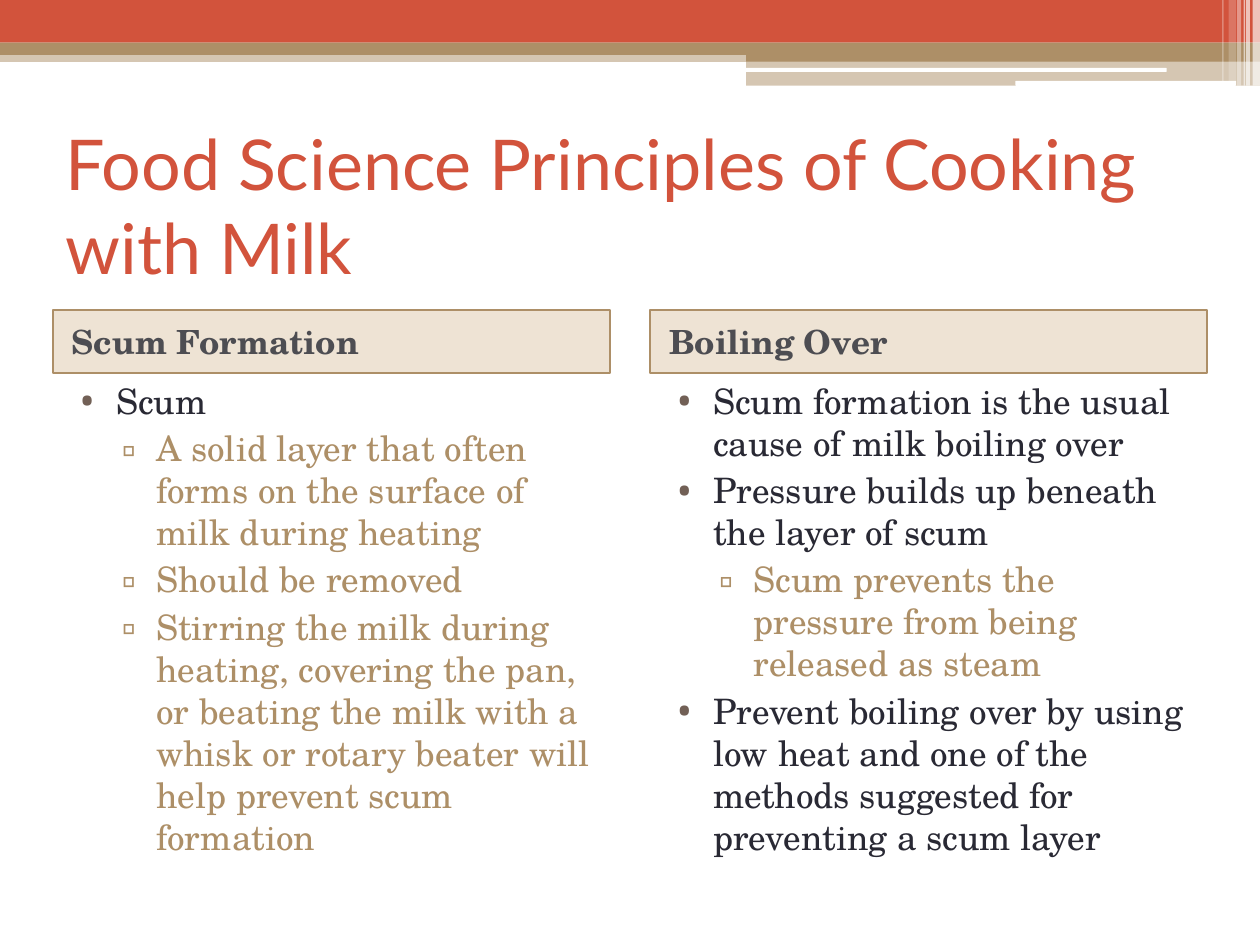
"""Build a slide on the food science principles of cooking with milk."""
from dataclasses import dataclass

from lxml.etree import SubElement
from pptx import Presentation
from pptx.dml.color import RGBColor
from pptx.enum.shapes import MSO_SHAPE
from pptx.enum.text import MSO_ANCHOR, PP_ALIGN
from pptx.oxml.ns import qn
from pptx.slide import Slide
from pptx.util import Cm, Pt


def colour(hex_code):
    return RGBColor.from_string(hex_code)


@dataclass
class MilkSlide:
    slide: Slide
    red: str = "D2533C"
    tan: str = "AD8F67"
    white: str = "FFFFFF"
    ink: str = "292934"
    title_font: str = "Lato"
    body_font: str = "TeX Gyre Schola"

    def block(self, left, top, width, height, fill, opacity=100, preset=MSO_SHAPE.RECTANGLE):
        shape = self.slide.shapes.add_shape(preset, Cm(left), Cm(top), Cm(width), Cm(height))
        shape.shadow.inherit = False
        shape.line.fill.background()
        shape.fill.solid()
        shape.fill.fore_color.rgb = colour(fill)
        if opacity < 100:
            rgb = shape.fill._xPr.find(qn("a:solidFill"))[0]
            SubElement(rgb, qn("a:alpha"), val=str(opacity * 1000))
        return shape

    def frame(self, left, top, width, height):
        box = self.slide.shapes.add_textbox(Cm(left), Cm(top), Cm(width), Cm(height))
        box.text_frame.word_wrap = True
        return box.text_frame

    def set_text(self, paragraph, text, font, size, hex_code, bold=False):
        paragraph.text = text
        paragraph.alignment = PP_ALIGN.LEFT
        paragraph.font.name = font
        paragraph.font.size = Pt(size)
        paragraph.font.bold = bold
        paragraph.font.color.rgb = colour(hex_code)

    def title(self, text, left, top, width, height):
        frame = self.frame(left, top, width, height)
        frame.vertical_anchor = MSO_ANCHOR.MIDDLE
        self.set_text(frame.paragraphs[0], text, self.title_font, 40, self.red)

    def heading(self, text, left, top, width, height):
        band = self.block(left, top, width, height, "BE9256", 25)
        band.line.color.rgb = colour(self.tan)
        band.line.width = Pt(1)
        frame = band.text_frame
        frame.word_wrap = True
        frame.vertical_anchor = MSO_ANCHOR.MIDDLE
        paragraph = frame.paragraphs[0]
        paragraph._p.get_or_add_pPr().set("marL", str(Cm(0.13)))
        paragraph.space_before = Pt(3)
        self.set_text(paragraph, text, self.body_font, 19, "4D4D52", bold=True)

    def bullets(self, points, left, top, width, height):
        styles = [("•", "726056", self.ink, 1.02, -0.71), ("▫", self.tan, self.tan, 1.83, -0.69)]
        frame = self.frame(left, top, width, height)
        for index, (level, text) in enumerate(points):
            mark, mark_colour, text_colour, margin, indent = styles[level]
            paragraph = frame.add_paragraph() if index else frame.paragraphs[0]
            paragraph.level = level
            properties = paragraph._p.get_or_add_pPr()
            properties.set("marL", str(Cm(margin)))
            properties.set("indent", str(Cm(indent)))
            SubElement(SubElement(properties, qn("a:buClr")), qn("a:srgbClr"), val=mark_colour)
            SubElement(properties, qn("a:buFont"), typeface="Georgia")
            SubElement(properties, qn("a:buChar"), char=mark)
            paragraph.space_before = Pt(3)
            self.set_text(paragraph, text, self.body_font, 20, text_colour)


def main():
    deck = Presentation()
    deck.slide_width, deck.slide_height = Cm(25.4), Cm(19.05)
    page = MilkSlide(deck.slides.add_slide(deck.slide_layouts[6]))

    page.block(0, 1.02, 25.4, 0.23, page.tan, 50)
    page.block(0, 0, 25.4, 0.86, page.red)
    page.block(0, 0.86, 25.4, 0.25, page.tan)
    page.block(15.04, 0.99, 10.36, 0.25, page.tan)
    page.block(15.04, 1.22, 10.36, 0.51, page.tan, 50)
    for left, top, width, height in [(15.01, 1.37, 8.51, 0.08), (20.47, 1.63, 4.45, 0.1)]:
        page.block(left, top, width, height, page.white, preset=MSO_SHAPE.ROUNDED_RECTANGLE)

    stripes = [
        (25.25, 0.15, 1.73, 65),
        (25.12, 0.08, 1.73, 65),
        (25.07, 0.03, 1.73, 60),
        (24.94, 0.08, 1.73, 40),
        (24.77, 0.15, 1.63, 20),
        (24.64, 0.03, 1.63, 30),
    ]
    for left, width, height, opacity in stripes:
        page.block(left, 0, width, height, page.white, opacity)

    page.title("Food Science Principles of Cooking with Milk", 1.07, 2.11, 23.29, 4.04)

    columns = [
        ("Scum Formation", [
            (0, "Scum"),
            (1, "A solid layer that often forms on the surface of milk during heating"),
            (1, "Should be removed"),
            (1, "Stirring the milk during heating, covering the pan, or beating the milk "
                "with a whisk or rotary beater will help prevent scum formation"),
        ]),
        ("Boiling Over", [
            (0, "Scum formation is the usual cause of milk boiling over"),
            (0, "Pressure builds up beneath the layer of scum"),
            (1, "Scum prevents the pressure from being released as steam"),
            (0, "Prevent boiling over by using low heat and one of the methods suggested "
                "for preventing a scum layer"),
        ]),
    ]
    for index, (heading, points) in enumerate(columns):
        left = 1.07 + index * 12.04
        page.heading(heading, left, 6.25, 11.23, 1.27)
        page.bullets(points, left, 7.52, 11.23, 10.8)

    deck.save("out.pptx")


if __name__ == "__main__":
    main()
